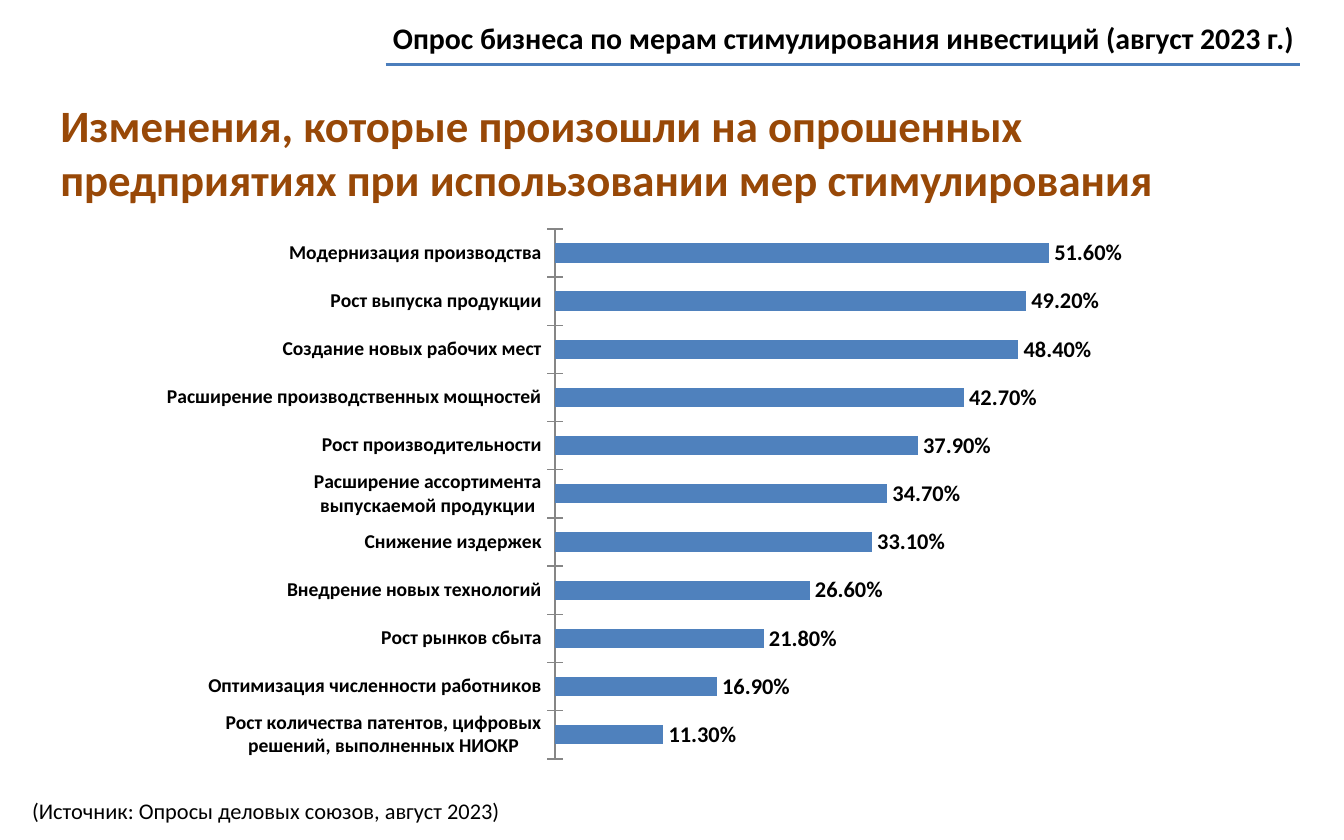
from lxml import etree
from pptx import Presentation
from pptx.chart.data import CategoryChartData
from pptx.dml.color import RGBColor
from pptx.enum.chart import XL_CHART_TYPE as ChartType
from pptx.enum.chart import XL_LABEL_POSITION as LabelPosition
from pptx.enum.chart import XL_TICK_LABEL_POSITION as TickLabelPosition
from pptx.enum.chart import XL_TICK_MARK as TickMark
from pptx.enum.shapes import MSO_CONNECTOR as Connector
from pptx.enum.text import PP_ALIGN as Align
from pptx.oxml import parse_xml
from pptx.oxml.ns import nsdecls, qn
from pptx.util import Inches, Pt

FONT = "Calibri"
BLACK = "000000"


def color(value):
    return RGBColor.from_string(value)


def add_text(slide, area, text, size, hex_color=BLACK, bold=False, align=Align.LEFT):
    box = slide.shapes.add_textbox(*(Inches(length) for length in area))
    box.text_frame.word_wrap = True
    para = box.text_frame.paragraphs[0]
    para.alignment = align
    span = para.add_run()
    span.text = text
    for name, value in {"name": FONT, "size": Pt(size), "bold": bold}.items():
        setattr(span.font, name, value)
    span.font.color.rgb = color(hex_color)


deck = Presentation()
deck.slide_width, deck.slide_height = Inches(10), Inches(6.25)
slide = deck.slides.add_slide(deck.slide_layouts[6])

# Header and title
add_text(slide, (0.35, 0.68, 9.31, 5.04),
         "Изменения, которые произошли на опрошенных предприятиях "
         "при использовании мер стимулирования", 24, "984807", bold=True)
add_text(slide, (2.09, 0.1, 7.64, 0.37),
         "Опрос бизнеса по мерам стимулирования инвестиций (август 2023 г.)",
         16, bold=True, align=Align.RIGHT)
rule = slide.shapes.add_connector(
    Connector.STRAIGHT, Inches(2.87), Inches(0.48), Inches(9.67), Inches(0.48))
rule.line.color.rgb = color("4B7EBC")
rule.line.width = Pt(1.25)
etree.SubElement(rule.element.spPr, qn("a:effectLst"))

# Bar chart
changes = {
    "Модернизация производства": 0.516,
    "Рост выпуска продукции": 0.492,
    "Создание новых рабочих мест": 0.484,
    "Расширение производственных мощностей": 0.427,
    "Рост производительности": 0.379,
    "Расширение ассортимента\nвыпускаемой продукции": 0.347,
    "Снижение издержек": 0.331,
    "Внедрение новых технологий": 0.266,
    "Рост рынков сбыта": 0.218,
    "Оптимизация численности работников": 0.169,
    "Рост количества патентов, цифровых\nрешений, выполненных НИОКР": 0.113,
}
data = CategoryChartData(number_format="0.00%")
data.categories = list(changes)
data.add_series("Series 1", list(changes.values()))
chart = slide.shapes.add_chart(
    ChartType.BAR_CLUSTERED, Inches(0.83), Inches(1.55), Inches(8.11), Inches(4.25), data).chart
chart.has_legend = False
chart.has_title = False

category_axis = chart.category_axis
category_axis.reverse_order = True
category_axis.major_tick_mark = TickMark.CROSS
category_axis.tick_label_position = TickLabelPosition.NEXT_TO_AXIS
category_axis.has_major_gridlines = False
category_axis.format.line.color.rgb = color("868686")

value_axis = chart.value_axis
for name, value in {"visible": False, "has_major_gridlines": False,
                    "minimum_scale": 0, "maximum_scale": 0.6}.items():
    setattr(value_axis, name, value)

plot = chart.plots[0]
plot.gap_width = 150
plot.vary_by_categories = False
fill = plot.series[0].format.fill
fill.solid()
fill.fore_color.rgb = color("4F81BD")

plot.has_data_labels = True
labels = plot.data_labels
for name, value in {"show_value": True, "number_format": "0.00%",
                    "number_format_is_linked": False,
                    "position": LabelPosition.OUTSIDE_END}.items():
    setattr(labels, name, value)

for font, size, bold in ((chart.font, 14, False),
                         (category_axis.tick_labels.font, 10.5, True),
                         (labels.font, 12, True)):
    for name, value in {"name": FONT, "size": Pt(size), "bold": bold}.items():
        setattr(font, name, value)
    font.color.rgb = color(BLACK)

# Fixed inner plot area, as fractions of the chart
plot_area = chart.element.find(".//" + qn("c:plotArea"))
for old_layout in plot_area.findall(qn("c:layout")):
    plot_area.remove(old_layout)
fractions = "".join(f'<c:{name} val="{value}"/>' for name, value in
                    {"x": 0.407, "y": 0.036, "w": 0.527, "h": 0.928}.items())
plot_area.insert(0, parse_xml(
    f'<c:layout {nsdecls("c")}><c:manualLayout><c:layoutTarget val="inner"/>'
    f'<c:xMode val="edge"/><c:yMode val="edge"/>{fractions}</c:manualLayout></c:layout>'))

# Source note
add_text(slide, (0.14, 5.88, 8.72, 0.3), "(Источник: Опросы деловых союзов, август 2023)", 12)

deck.save("out.pptx")
